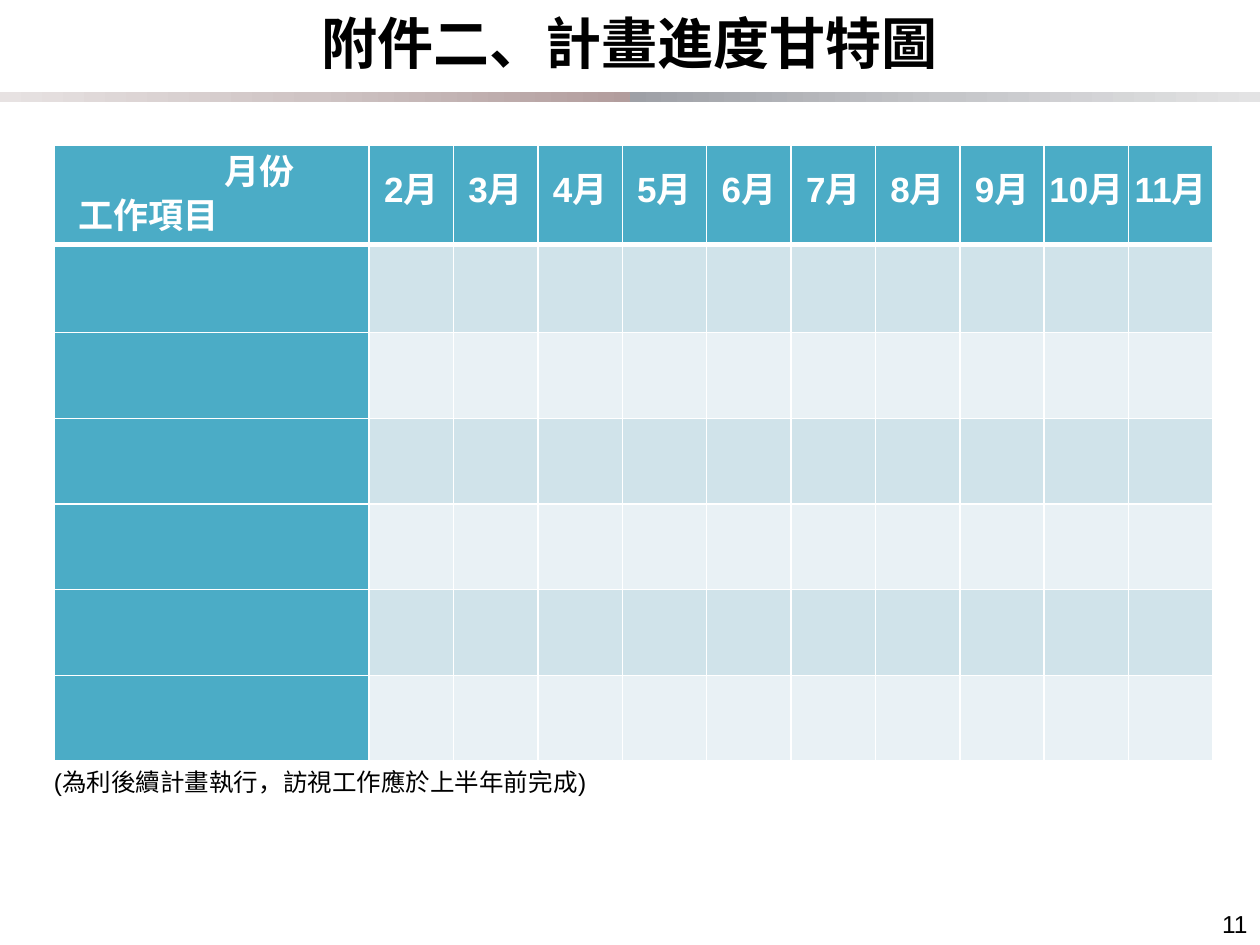
from copy import deepcopy

from pptx import Presentation
from pptx.dml.color import RGBColor
from pptx.enum.shapes import MSO_SHAPE as Shape
from pptx.enum.text import MSO_ANCHOR as Anchor, MSO_AUTO_SIZE as Fit, PP_ALIGN as Align
from pptx.oxml import parse_xml
from pptx.oxml.ns import nsdecls, qn
from pptx.util import Inches, Pt

FONT = "Arial"
BLACK = RGBColor(0x00, 0x00, 0x00)
WHITE = RGBColor(0xFF, 0xFF, 0xFF)
TEAL = RGBColor(0x4B, 0xAC, 0xC6)
BANDS = [RGBColor(0xD0, 0xE3, 0xEA), RGBColor(0xE9, 0xF1, 0xF5)]
ROSE = [RGBColor(0xB2, 0x9D, 0x9D), RGBColor(0xCF, 0xC4, 0xC4), RGBColor(0xE7, 0xE2, 0xE2)]
GREY = [RGBColor(0x9E, 0xA0, 0xA6), RGBColor(0xC5, 0xC6, 0xC9), RGBColor(0xE3, 0xE3, 0xE4)]

WIDE, HIGH = Inches(10), Inches(7.5)
MONTHS = [f"{n}月" for n in range(2, 12)]
COLS = [2.5] + [0.67] * len(MONTHS)
ROWS = [0.79, 0.7] + [0.68] * 5


def style(para, size, color, bold=False, align=Align.LEFT, line=None):
    para.alignment = align
    if line:
        para.line_spacing = Pt(line)
    for run in para.runs:
        font = run.font
        font.name, font.size, font.bold = FONT, Pt(size), bold
        font.color.rgb = color


def place(shape, left, top, width, height):
    shape.left, shape.top = Inches(left), Inches(top)
    shape.width, shape.height = Inches(width), Inches(height)


def add_bar(slide, left, colors, angle):
    """Half-width rule that fades from the slide's centre outwards."""
    bar = slide.shapes.add_shape(Shape.RECTANGLE, left, Inches(0.73), WIDE // 2, Inches(0.08))
    bar.shadow.inherit = False
    bar.line.fill.background()
    bar.fill.gradient()
    bar.fill.gradient_angle = angle
    stops = bar._element.spPr.find(".//" + qn("a:gsLst"))
    stops.insert(1, deepcopy(stops[0]))
    for i, (stop, color) in enumerate(zip(bar.fill.gradient_stops, colors)):
        stop.position = i / 2
        stop.color.rgb = color


def add_note(slide, text, box, align, anchor):
    note = slide.shapes.add_textbox(0, 0, 0, 0)
    place(note, *box)
    frame = note.text_frame
    frame.word_wrap = True
    frame.vertical_anchor = anchor
    frame.text = text
    style(frame.paragraphs[0], 14, BLACK, align=align)


def set_edges(cell, row):
    """White cell borders, heavy below the header row."""
    widths = {"L": 1, "R": 1, "T": 3 if row == 1 else 1, "B": 3 if row == 0 else 1}
    props = cell._tc.get_or_add_tcPr()
    for i, (side, width) in enumerate(widths.items()):
        props.insert(i, parse_xml(
            f'<a:ln{side} {nsdecls("a")} w="{Pt(width)}"><a:solidFill>'
            f'<a:srgbClr val="{WHITE}"/></a:solidFill></a:ln{side}>'))


def set_head(cell, text, align, line):
    cell.vertical_anchor = Anchor.MIDDLE
    cell.margin_left = cell.margin_right = Inches(0.02)
    cell.margin_top = cell.margin_bottom = 0
    cell.text_frame.text = text
    for para in cell.text_frame.paragraphs:
        style(para, 20, WHITE, True, align, line)


def add_gantt(slide):
    frame = slide.shapes.add_table(
        len(ROWS), len(COLS), Inches(0.43), Inches(1.15),
        Inches(sum(COLS)), Inches(sum(ROWS)))
    table = frame.table
    for col, width in zip(table.columns, COLS):
        col.width = Inches(width)
    for r, height in enumerate(ROWS):
        table.rows[r].height = Inches(height)
        for c in range(len(COLS)):
            cell = table.cell(r, c)
            cell.fill.solid()
            cell.fill.fore_color.rgb = TEAL if r == 0 or c == 0 else BANDS[(r - 1) % 2]
            set_edges(cell, r)

    # Header row: split corner label, then the months
    corner = table.cell(0, 0)
    set_head(corner, "月份\n工作項目", Align.LEFT, 25)
    for para, indent in zip(corner.text_frame.paragraphs, (1.33, 0.17)):
        para._p.get_or_add_pPr().set("marL", str(Inches(indent)))
    for c, month in enumerate(MONTHS, 1):
        set_head(table.cell(0, c), month, Align.CENTER, 20)


def set_title(slide, text):
    title = slide.shapes.title
    place(title, 0, 0.13, 10, 0.52)
    frame = title.text_frame
    frame.auto_size = Fit.NONE
    frame.vertical_anchor = Anchor.MIDDLE
    frame.text = text
    style(frame.paragraphs[0], 32, BLACK, True, Align.CENTER, 30)


def main():
    deck = Presentation()
    deck.slide_width, deck.slide_height = WIDE, HIGH
    slide = deck.slides.add_slide(deck.slide_layouts[5])

    # Heading and rule
    set_title(slide, "附件二、計畫進度甘特圖")
    add_bar(slide, 0, ROSE, 180)
    add_bar(slide, WIDE // 2, GREY, 0)

    # Schedule, remark and page number
    add_gantt(slide)
    add_note(slide, "(為利後續計畫執行，訪視工作應於上半年前完成)",
             (0.33, 6.04, 5.01, 0.34), Align.LEFT, Anchor.TOP)
    add_note(slide, "11", (7.67, 6.98, 2.33, 0.52), Align.RIGHT, Anchor.BOTTOM)
    deck.save("out.pptx")


if __name__ == "__main__":
    main()
